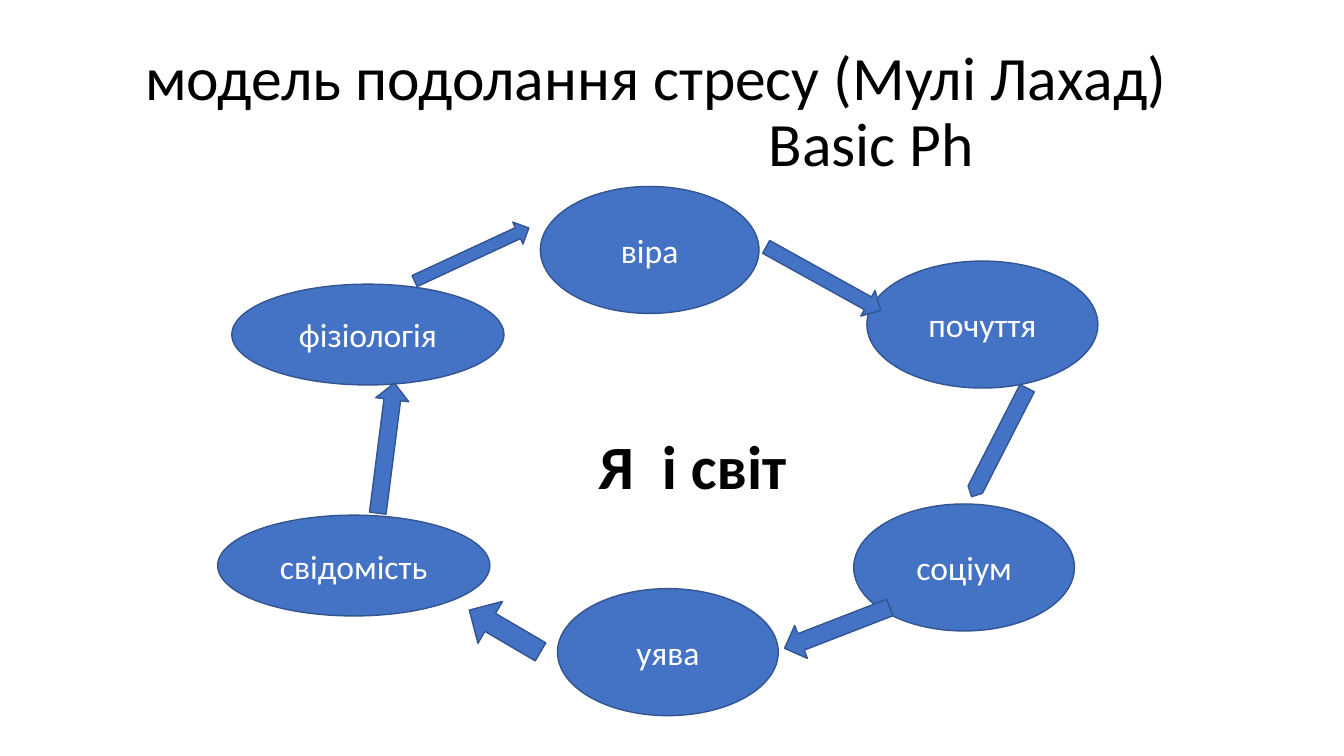
from dataclasses import dataclass

from pptx import Presentation
from pptx.dml.color import RGBColor
from pptx.enum import shapes, text
from pptx.util import Pt


@dataclass(frozen=True)
class Theme:
    font: str = "Calibri"
    ink: RGBColor = RGBColor(0x00, 0x00, 0x00)
    label: RGBColor = RGBColor(0xFF, 0xFF, 0xFF)
    fill: RGBColor = RGBColor(0x44, 0x72, 0xC4)
    outline: RGBColor = RGBColor(0x32, 0x54, 0x91)
    heading_size: int = 44
    label_size: int = 24


theme = Theme()
KIND = shapes.MSO_SHAPE

presentation = Presentation()
presentation.slide_width = Pt(960)
presentation.slide_height = Pt(540)
slide = presentation.slides.add_slide(presentation.slide_layouts[6])


def set_font(paragraph, size, color, bold=False):
    paragraph.font.name = theme.font
    paragraph.font.size = Pt(size)
    paragraph.font.color.rgb = color
    paragraph.font.bold = bold


def add_blue_shape(kind, left, top, width, height):
    shape = slide.shapes.add_shape(kind, Pt(left), Pt(top), Pt(width), Pt(height))
    shape.shadow.inherit = False
    shape.fill.solid()
    shape.fill.fore_color.rgb = theme.fill
    shape.line.color.rgb = theme.outline
    shape.line.width = Pt(1)
    return shape


# Title: each centred line is shifted by a margin on one side
title = slide.shapes.add_textbox(Pt(66), Pt(28.8), Pt(828), Pt(104.4)).text_frame
title.word_wrap = True
title.vertical_anchor = text.MSO_ANCHOR.MIDDLE
title_lines = [
    ("модель подолання стресу (Мулі Лахад)", "marR", 22),
    ("Basic Ph", "marL", 307),
]
for index, (line, margin, size) in enumerate(title_lines):
    paragraph = title.add_paragraph() if index else title.paragraphs[0]
    paragraph.text = line
    paragraph.alignment = text.PP_ALIGN.CENTER
    paragraph.line_spacing = 0.9
    paragraph._p.get_or_add_pPr().set(margin, str(Pt(size)))
    set_font(paragraph, theme.heading_size, theme.ink)

# Resources: label, left, top, width, height
resources = [
    ("почуття", 619.2, 186.5, 165, 90.7),
    ("соціум", 609.8, 360, 157.7, 90.7),
    ("віра", 386, 133.2, 156.2, 90.7),
    ("фізіологія", 165.6, 203, 194.4, 72),
    ("свідомість", 155.5, 368, 194.4, 72),
    ("уява", 398.2, 420.5, 157.7, 90.7),
]
for label, *box in resources:
    ellipse = add_blue_shape(KIND.OVAL, *box)
    ellipse.text_frame.vertical_anchor = text.MSO_ANCHOR.MIDDLE
    paragraph = ellipse.text_frame.paragraphs[0]
    paragraph.text = label
    paragraph.alignment = text.PP_ALIGN.CENTER
    set_font(paragraph, theme.label_size, theme.label)

# Arrows: kind, left, top, width, height, rotation, shaft thickness
arrows = [
    (KIND.RIGHT_ARROW, 541.4, 188.6, 93.6, 20.9, 29, 0.5),
    (KIND.RIGHT_ARROW, 670.3, 310.3, 87.1, 11.5, 117.1, 1),
    (KIND.DOWN_ARROW, 328.3, 136.8, 17.3, 90, 245.1, 0.5),
    (KIND.RIGHT_ARROW, 229, 308.2, 93.6, 23.8, 277.3, 0.5),
    (KIND.RIGHT_ARROW, 331.2, 433.4, 59, 34.6, 210.4, 0.43),
    (KIND.DOWN_ARROW, 585.4, 408.2, 25.2, 80.6, 68.8, 0.5),
]
for kind, left, top, width, height, rotation, thickness in arrows:
    arrow = add_blue_shape(kind, left, top, width, height)
    arrow.rotation = rotation
    arrow.adjustments[0] = thickness
    arrow.adjustments[1] = 0.5

# Centre caption, with a widened space after the first word
caption = slide.shapes.add_textbox(Pt(420.5), Pt(302.4), Pt(149.8), Pt(60.5)).text_frame
caption.word_wrap = False
caption.auto_size = text.MSO_AUTO_SIZE.SHAPE_TO_FIT_TEXT
paragraph = caption.paragraphs[0]
for part, spacing in [("Я", 0), (" ", 10), ("і світ", 0)]:
    run = paragraph.add_run()
    run.text = part
    if spacing:
        run.font._element.set("spc", str(spacing * 100))
set_font(paragraph, theme.heading_size, theme.ink, bold=True)

presentation.save("out.pptx")
